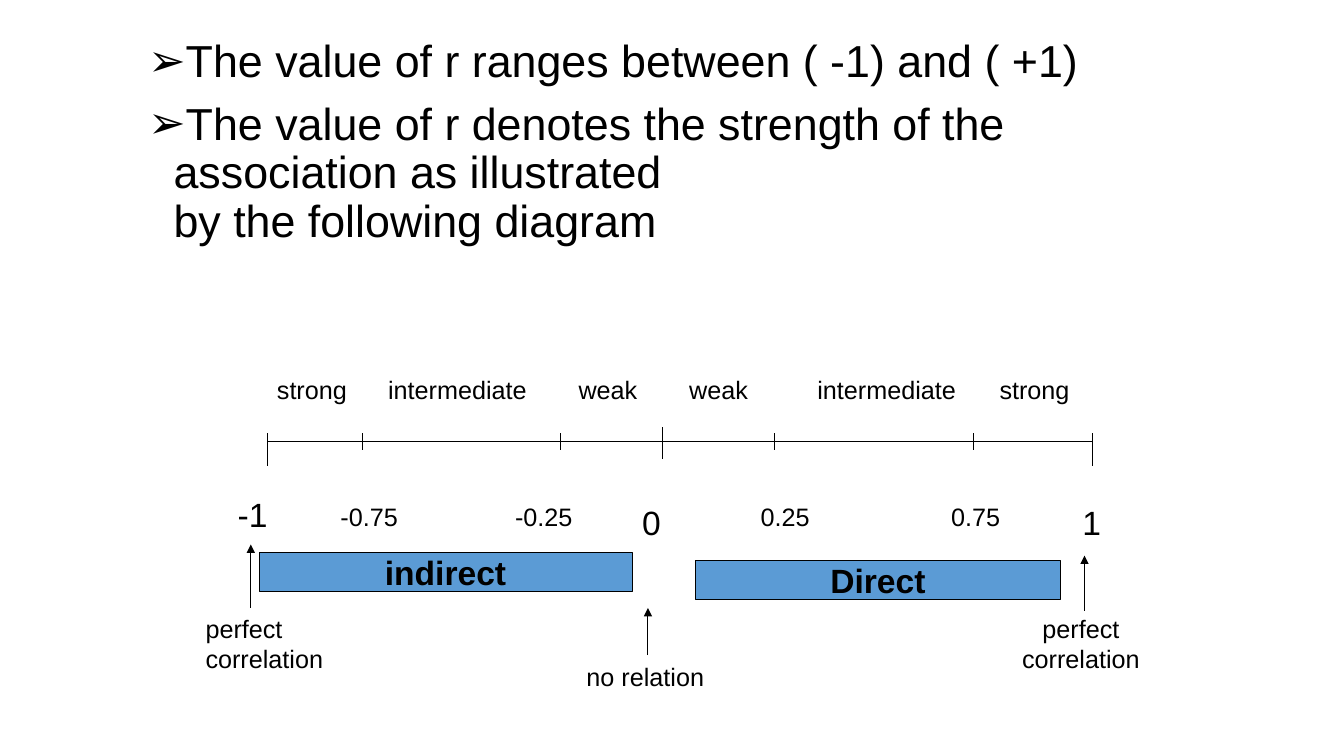
from lxml import etree
from pptx import Presentation
from pptx import util as u
from pptx.dml.color import RGBColor
from pptx.enum import shapes, text
from pptx.oxml.ns import qn

COLORS = {"ink": "000000", "bar": "5B9BD5"}
POINTS = [
    "The value of r ranges between ( -1) and ( +1)",
    "The value of r denotes the strength of the association as illustrated"
    "\vby the following diagram",
]
AXIS_Y = 11.13
AXIS_LEFT, AXIS_RIGHT, AXIS_ZERO = 6.73, 27.53, 16.69
QUARTER_TICKS = [9.14, 14.12, 19.53, 24.54]
STRENGTHS = [
    ("strong", 6.73, 2.39), ("intermediate", 9.53, 4.39), ("weak", 14.33, 2.21),
    ("weak", 17.12, 2.21), ("intermediate", 20.35, 4.39), ("strong", 24.94, 2.39),
]
QUARTER_VALUES = [("-0.75", 8.33), ("-0.25", 12.73), ("0.25", 18.92), ("0.75", 23.72)]
MAIN_VALUES = [("-1", 5.74, 12.32, 1.27), ("0", 15.93, 12.52, 0.99), ("1", 27.03, 12.52, 0.99)]
ARROWS = [(6.32, 15.32, 13.72), (16.33, 16.51, 15.32), (27.33, 15.39, 14.0)]
BARS = [("indirect", 6.53, 13.92, 9.4), ("Direct", 17.53, 14.12, 9.19)]


def color(name):
    return RGBColor.from_string(COLORS[name])


def apply(target, formats):
    for name, value in formats.items():
        setattr(target, name, value)


class SlideBuilder:
    """Holds the current slide and its type style; lengths are centimetres."""

    font = "Arial"
    line_width = u.Pt(0.75)

    def __init__(self, page):
        self.page = page

    def style(self, para, size, **formats):
        apply(para.font, {"name": self.font, "size": u.Pt(size), **formats})
        para.font.color.rgb = color("ink")

    def outline(self, line):
        line.color.rgb = color("ink")
        line.width = self.line_width

    def bullets(self, points, left, top, width, height, size):
        body = self.page.placeholders[1]
        apply(body, {"left": u.Cm(left), "top": u.Cm(top),
                     "width": u.Cm(width), "height": u.Cm(height)})
        frame = body.text_frame
        apply(frame, {"text": "\n".join(points), "auto_size": text.MSO_AUTO_SIZE.NONE,
                      "vertical_anchor": text.MSO_ANCHOR.TOP})
        for para in frame.paragraphs:
            self.style(para, size)
            apply(para, {"line_spacing": 0.9, "space_before": u.Pt(10),
                         "alignment": text.PP_ALIGN.LEFT})
            props = para._p.get_or_add_pPr()
            props.set("marL", str(u.Cm(0.64)))
            props.set("indent", str(u.Cm(-0.64)))
            bullet = etree.Element(qn("a:buChar"), char="➢")
            props.find(qn("a:spcBef")).addnext(bullet)

    def label(self, words, left, top, width, height=1.02, size=18, wrap=True,
              align=text.PP_ALIGN.LEFT):
        box = self.page.shapes.add_textbox(u.Cm(left), u.Cm(top), u.Cm(width), u.Cm(height))
        apply(box.text_frame, {"text": words, "word_wrap": wrap,
                               "auto_size": text.MSO_AUTO_SIZE.SHAPE_TO_FIT_TEXT})
        para = box.text_frame.paragraphs[0]
        para.alignment = align
        self.style(para, size)

    def line(self, x1, y1, x2, y2, arrow=False):
        rule = self.page.shapes.add_connector(
            shapes.MSO_CONNECTOR.STRAIGHT, u.Cm(x1), u.Cm(y1), u.Cm(x2), u.Cm(y2))
        self.outline(rule.line)
        if arrow:
            etree.SubElement(rule.line._get_or_add_ln(), qn("a:tailEnd"), type="triangle")
        etree.SubElement(rule._element.spPr, qn("a:effectLst"))

    def bar(self, words, left, top, width, height=0.99):
        box = self.page.shapes.add_shape(
            shapes.MSO_SHAPE.RECTANGLE, u.Cm(left), u.Cm(top), u.Cm(width), u.Cm(height))
        box.shadow.inherit = False
        box.fill.solid()
        box.fill.fore_color.rgb = color("bar")
        self.outline(box.line)
        apply(box.text_frame, {"text": words, "word_wrap": False,
                               "vertical_anchor": text.MSO_ANCHOR.MIDDLE})
        para = box.text_frame.paragraphs[0]
        para.alignment = text.PP_ALIGN.CENTER
        self.style(para, 24, bold=True)


def main():
    deck = Presentation()
    apply(deck, {"slide_width": u.Cm(33.87), "slide_height": u.Cm(19.05)})
    page = deck.slides.add_slide(deck.slide_layouts[1])
    title = page.shapes.title._element
    title.getparent().remove(title)

    slide = SlideBuilder(page)
    slide.bullets(POINTS, 3.48, 0.86, 24.89, 5.46, size=32)

    slide.line(AXIS_LEFT, AXIS_Y, AXIS_RIGHT, AXIS_Y)
    for x in (AXIS_LEFT, AXIS_RIGHT):
        slide.line(x, 10.92, x, 11.73)
    slide.line(AXIS_ZERO, 10.77, AXIS_ZERO, 11.56)
    for x in QUARTER_TICKS:
        slide.line(x, 10.92, x, 11.33)

    for words, left, width in STRENGTHS:
        slide.label(words, left, 9.32, width)
    for words, left in QUARTER_VALUES:
        slide.label(words, left, 12.52, 2.21)
    for words, left, top, width in MAIN_VALUES:
        slide.label(words, left, top, width, 1.27, size=24, wrap=False)

    slide.label("no relation", 14.53, 16.54, 3.81)
    for left, align in ((4.93, text.PP_ALIGN.LEFT), (24.84, text.PP_ALIGN.CENTER)):
        slide.label("perfect correlation", left, 15.32, 4.8, 1.78, align=align)
    for x, start, end in ARROWS:
        slide.line(x, start, x, end, arrow=True)
    for words, left, top, width in BARS:
        slide.bar(words, left, top, width)

    deck.save("out.pptx")


if __name__ == "__main__":
    main()
